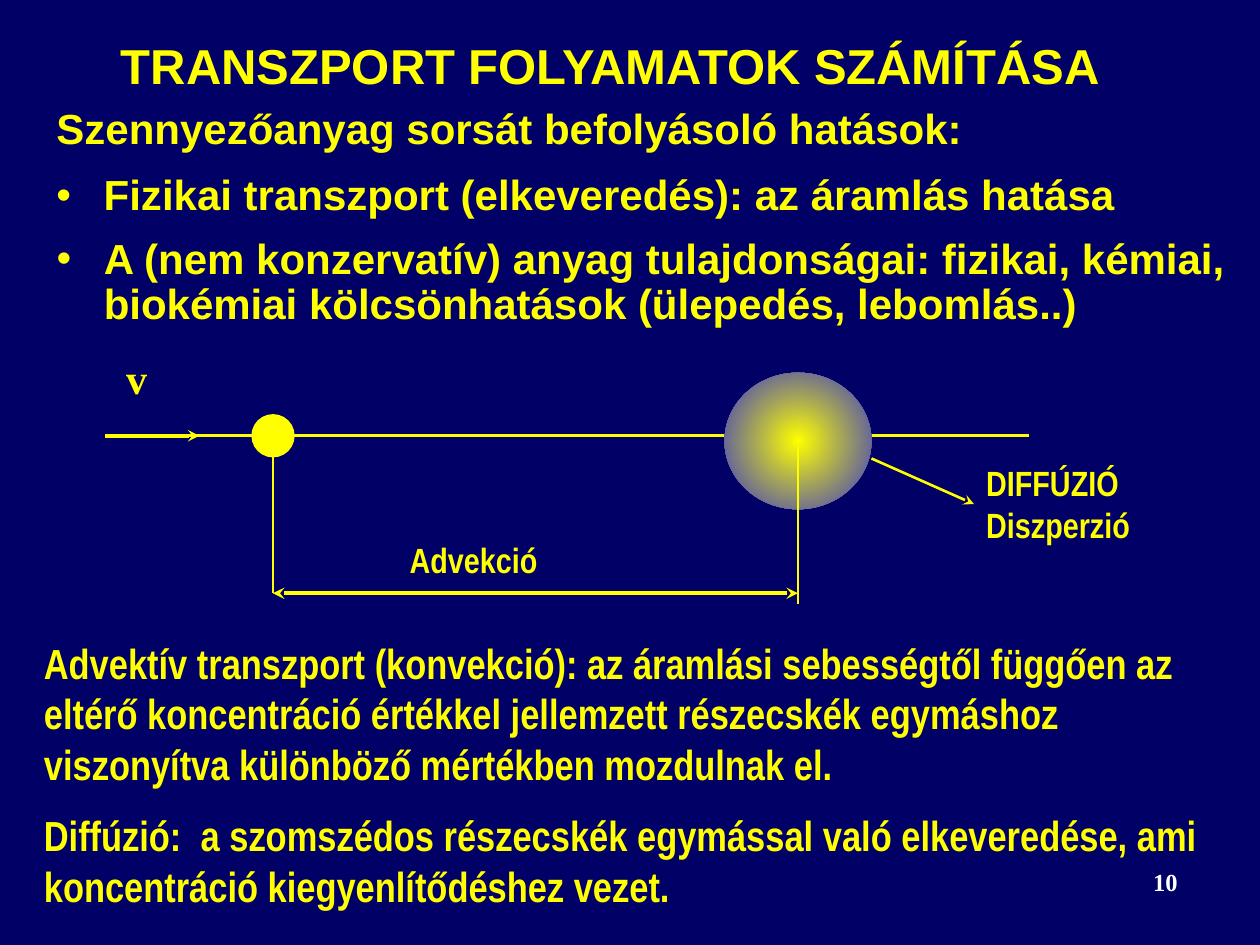
from dataclasses import dataclass

import lxml.etree
import pptx
import pptx.dml.color
import pptx.enum.shapes
import pptx.enum.text
import pptx.oxml.ns
import pptx.util

COLORS = {"navy": "000066", "yellow": "FFFF00", "violet": "3333CC", "white": "FFFFFF"}
HANGING_INDENT = 27
FLOW_Y = 249
SOURCE_X = 156
CLOUD_X = 456
ADVECTION_Y = 339


@dataclass(frozen=True)
class Line:
    text: str
    bullet: bool = False


@dataclass(frozen=True)
class Label:
    left: float
    top: float
    width: float
    height: float
    lines: tuple[Line, ...]
    size: float = 24
    font: str = "Arial"
    wrap: bool = True
    spacing: float = 1.0
    gap: float = 0
    color: str = "yellow"
    align_right: bool = False


@dataclass(frozen=True)
class Stroke:
    start_x: float
    start_y: float
    end_x: float
    end_y: float
    weight: float
    arrow_ends: tuple[str, ...] = ()


@dataclass(frozen=True)
class Disc:
    preset: pptx.enum.shapes.MSO_SHAPE
    center_x: float
    center_y: float
    width: float
    height: float
    gradient: bool = False


FLOW_LINE = Stroke(90, FLOW_Y, 588, FLOW_Y, 1.5)
DISCS = (
    Disc(pptx.enum.shapes.MSO_SHAPE.FLOWCHART_CONNECTOR, SOURCE_X, FLOW_Y, 24, 24),
    Disc(pptx.enum.shapes.MSO_SHAPE.OVAL, CLOUD_X, 252, 84, 78, True),
)
STROKES = (
    Stroke(SOURCE_X, FLOW_Y, SOURCE_X, ADVECTION_Y, 0.75),
    Stroke(CLOUD_X, 255, CLOUD_X, 345, 0.75),
    Stroke(SOURCE_X, ADVECTION_Y, CLOUD_X, ADVECTION_Y, 2.25, ("headEnd", "tailEnd")),
    Stroke(60, FLOW_Y, 114, FLOW_Y, 2.25, ("tailEnd",)),
    Stroke(498, 262, 556.5, 288, 1.5, ("tailEnd",)),
)
LABELS = (
    Label(62, 17, 580, 41, (Line("TRANSZPORT FOLYAMATOK SZÁMÍTÁSA"),), size=28, wrap=False),
    Label(25.2, 58.3, 676, 74, (
        Line("Szennyezőanyag sorsát befolyásoló hatások:"),
        Line("Fizikai transzport (elkeveredés): az áramlás hatása", True),
    ), spacing=0.9, gap=12),
    Label(25.2, 132.5, 682, 60, (
        Line("A (nem konzervatív) anyag tulajdonságai: fizikai, kémiai, biokémiai "
             "kölcsönhatások (ülepedés, lebomlás..)", True),
    ), spacing=0.9),
    Label(556.5, 260, 97, 55.5, (Line("DIFFÚZIÓ"), Line("Diszperzió")),
          size=20, font="Arial Narrow", wrap=False),
    Label(227, 304, 88, 31.5, (Line("Advekció"),), size=20, font="Arial Narrow", wrap=False),
    Label(65, 198, 26.5, 36, (Line("v"),), font="Times New Roman", wrap=False),
    Label(18, 360.7, 690.5, 167, (
        Line("Advektív transzport (konvekció): az áramlási sebességtől függően az eltérő "
             "koncentráció értékkel jellemzett részecskék egymáshoz viszonyítva különböző "
             "mértékben mozdulnak el."),
        Line("Diffúzió:  a szomszédos részecskék egymással való elkeveredése, ami "
             "koncentráció kiegyenlítődéshez vezet."),
    ), font="Arial Narrow", gap=12),
    Label(530, 492, 150, 36, (Line("10"),), size=14, font="Times New Roman",
          color="white", align_right=True),
)


def rgb(name: str) -> pptx.dml.color.RGBColor:
    return pptx.dml.color.RGBColor.from_string(COLORS[name])


def add_element(parent, tag: str, **attributes: str):
    return lxml.etree.SubElement(parent, pptx.oxml.ns.qn(tag), attributes)


def add_label(slide, label: Label) -> None:
    shape = slide.shapes.add_textbox(
        *map(pptx.util.Pt, (label.left, label.top, label.width, label.height)))
    frame = shape.text_frame
    frame.word_wrap = label.wrap
    for index, line in enumerate(label.lines):
        paragraph = frame.paragraphs[0] if index == 0 else frame.add_paragraph()
        paragraph.line_spacing = label.spacing
        if index and label.gap:
            paragraph.space_before = pptx.util.Pt(label.gap)
        if label.align_right:
            paragraph.alignment = pptx.enum.text.PP_ALIGN.RIGHT
        if line.bullet:
            properties = paragraph._p.get_or_add_pPr()
            indent = int(pptx.util.Pt(HANGING_INDENT))
            properties.set("marL", str(indent))
            properties.set("indent", str(-indent))
            add_element(properties, "a:buFont", typeface="Arial")
            add_element(properties, "a:buChar", char="•")
        run = paragraph.add_run()
        run.text = line.text
        run.font.name = label.font
        run.font.size = pptx.util.Pt(label.size)
        run.font.bold = True
        run.font.color.rgb = rgb(label.color)


def add_stroke(slide, stroke: Stroke) -> None:
    connector = slide.shapes.add_connector(
        pptx.enum.shapes.MSO_CONNECTOR.STRAIGHT,
        *map(pptx.util.Pt, (stroke.start_x, stroke.start_y, stroke.end_x, stroke.end_y)))
    connector.line.width = pptx.util.Pt(stroke.weight)
    connector.line.color.rgb = rgb("yellow")
    outline = connector.line._get_or_add_ln()
    for end in stroke.arrow_ends:
        add_element(outline, f"a:{end}", type="stealth")
    add_element(connector._element.spPr, "a:effectLst")


def fill_radially(shape, inner: str, outer: str) -> None:
    shape.fill.gradient()
    for stop, color in zip(shape.fill.gradient_stops, (inner, outer)):
        stop.color.rgb = rgb(color)
    gradient = shape._element.spPr.find(pptx.oxml.ns.qn("a:gradFill"))
    gradient.remove(gradient.find(pptx.oxml.ns.qn("a:lin")))
    radial = add_element(gradient, "a:path", path="circle")
    add_element(radial, "a:fillToRect", l="50000", t="50000", r="50000", b="50000")


def add_disc(slide, disc: Disc) -> None:
    shape = slide.shapes.add_shape(disc.preset, *map(pptx.util.Pt, (
        disc.center_x - disc.width / 2, disc.center_y - disc.height / 2,
        disc.width, disc.height)))
    shape.shadow.inherit = False
    if disc.gradient:
        fill_radially(shape, "yellow", "violet")
        shape.line.fill.background()
    else:
        shape.fill.solid()
        shape.fill.fore_color.rgb = rgb("yellow")
        shape.line.color.rgb = rgb("yellow")
        shape.line.width = pptx.util.Pt(0.75)


def main() -> None:
    presentation = pptx.Presentation()
    presentation.slide_width = pptx.util.Pt(720)
    presentation.slide_height = pptx.util.Pt(540)
    slide = presentation.slides.add_slide(presentation.slide_layouts[6])
    slide.background.fill.solid()
    slide.background.fill.fore_color.rgb = rgb("navy")
    add_stroke(slide, FLOW_LINE)
    for disc in DISCS:
        add_disc(slide, disc)
    for stroke in STROKES:
        add_stroke(slide, stroke)
    for label in LABELS:
        add_label(slide, label)
    presentation.save("out.pptx")


if __name__ == "__main__":
    main()
